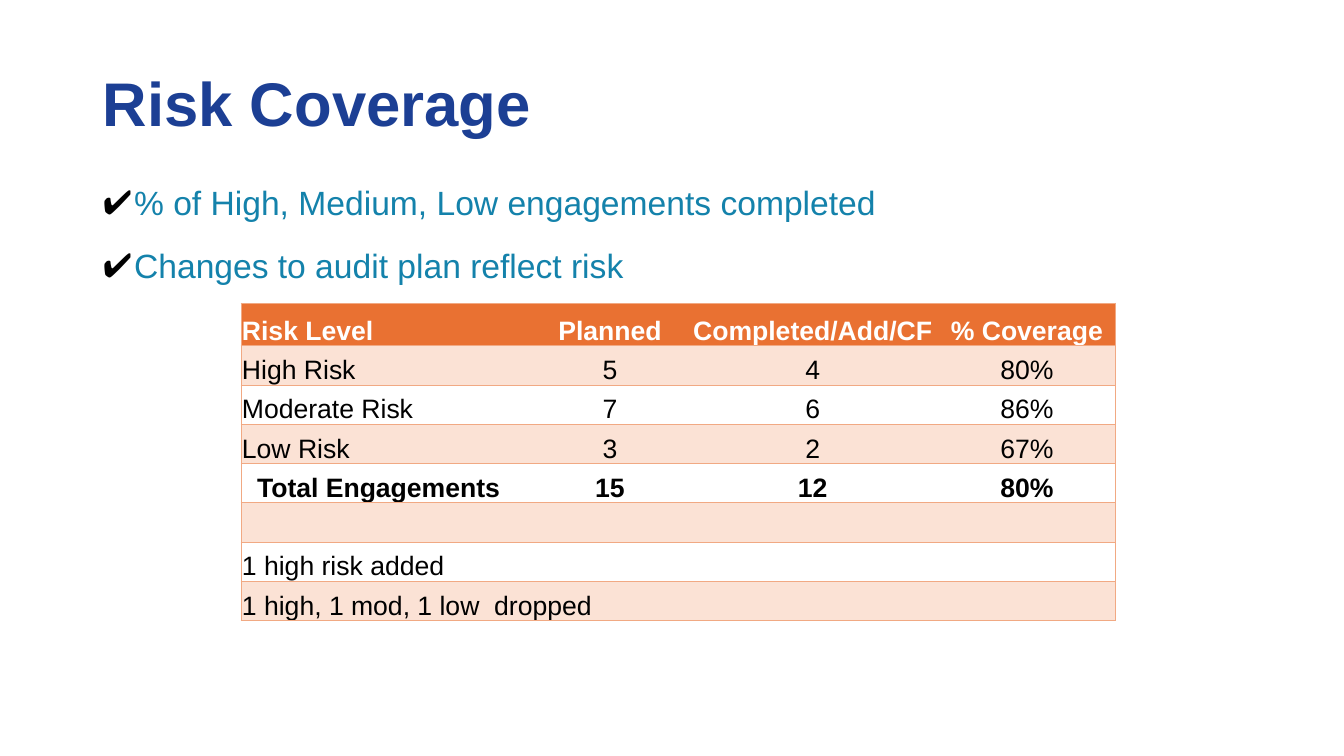
import pptx
import pptx.util
import pptx.dml.color
import pptx.enum.text
import pptx.oxml
import pptx.oxml.ns

Inches = pptx.util.Inches
Pt = pptx.util.Pt
RGBColor = pptx.dml.color.RGBColor
ALIGN = pptx.enum.text.PP_ALIGN
ANCHOR = pptx.enum.text.MSO_ANCHOR

NAVY = RGBColor(0x1C, 0x3F, 0x94)
TEAL = RGBColor(0x14, 0x82, 0xAB)
BLACK = RGBColor(0, 0, 0)
WHITE = RGBColor(255, 255, 255)
ORANGE = RGBColor(0xE9, 0x71, 0x32)
PEACH = RGBColor(0xFB, 0xE2, 0xD5)
EDGE = RGBColor(0xF1, 0xA9, 0x83)
FONT = "Arial"

POINTS = [
    "% of High, Medium, Low engagements completed",
    "Changes to audit plan reflect risk",
]
WIDTHS = [2.9, 1.52, 2.5, 1.75]
HEAD_H, ROW_H = 0.42, 0.39
TOTAL = 4
ROWS = [
    ["Risk Level", "Planned", "Completed/Add/CF", "% Coverage"],
    ["High Risk", "5", "4", "80%"],
    ["Moderate Risk", "7", "6", "86%"],
    ["Low Risk", "3", "2", "67%"],
    ["Total Engagements", "15", "12", "80%"],
    ["", "", "", ""],
    ["1 high risk added", "", "", ""],
    ["1 high, 1 mod, 1 low  dropped", "", "", ""],
]


def style(para, size, color, bold=False):
    for run in para.runs:
        run.font.name = FONT
        run.font.size = Pt(size)
        run.font.bold = bold
        run.font.color.rgb = color


def place(shape, box, anchor):
    shape.left, shape.top, shape.width, shape.height = map(Inches, box)
    frame = shape.text_frame
    frame.word_wrap = True
    frame.auto_size = pptx.enum.text.MSO_AUTO_SIZE.NONE
    frame.margin_left = frame.margin_right = Inches(0.1)
    frame.margin_top = frame.margin_bottom = 0
    frame.vertical_anchor = anchor
    return frame


def add_title(slide, box):
    frame = place(slide.shapes.title, box, ANCHOR.MIDDLE)
    frame.text = "Risk Coverage"
    para = frame.paragraphs[0]
    para.alignment = ALIGN.LEFT
    style(para, 44, NAVY, True)


def add_check(para):
    props = para._p.get_or_add_pPr()
    props.set("marL", str(Inches(0.31)))
    props.set("indent", str(-Inches(0.31)))
    space = pptx.oxml.ns.nsdecls("a")
    for xml in (
        f'<a:buClr {space}><a:srgbClr val="{BLACK}"/></a:buClr>',
        f'<a:buFont {space} typeface="{FONT}"/>',
        f'<a:buChar {space} char="✔"/>',
    ):
        props.append(pptx.oxml.parse_xml(xml))


def add_points(slide, box):
    frame = place(slide.placeholders[1], box, ANCHOR.TOP)
    for i, text in enumerate(POINTS):
        para = frame.add_paragraph() if i else frame.paragraphs[0]
        para.text = text
        add_check(para)
        para.line_spacing = 0.9
        para.space_before = Pt(19 if i else 0)
        style(para, 24, TEAL)


def set_edges(cell, sides):
    """Draw the named cell sides and clear the others."""
    props = cell._tc.get_or_add_tcPr()
    for i, side in enumerate("LRTB"):
        paint = (f'<a:solidFill><a:srgbClr val="{EDGE}"/></a:solidFill>'
                 if side in sides else "<a:noFill/>")
        props.insert(i, pptx.oxml.parse_xml(
            f'<a:ln{side} {pptx.oxml.ns.nsdecls("a")} w="{Pt(0.75)}">'
            f"{paint}</a:ln{side}>"))


def fill_cell(cell, text, row, col):
    head = row == 0
    cell.margin_left = Inches(0.16 if row == TOTAL and col == 0 else 0.01)
    cell.margin_right = cell.margin_top = Inches(0.01)
    cell.margin_bottom = 0
    cell.vertical_anchor = ANCHOR.BOTTOM
    cell.fill.solid()
    cell.fill.fore_color.rgb = ORANGE if head else PEACH if row % 2 else WHITE
    cell.text_frame.text = text
    para = cell.text_frame.paragraphs[0]
    para.alignment = ALIGN.CENTER if col else ALIGN.LEFT
    style(para, 19, WHITE if head else BLACK, head or row == TOTAL)
    set_edges(cell, "TB" + {0: "L", len(WIDTHS) - 1: "R"}.get(col, ""))


def add_grid(slide, box):
    table = slide.shapes.add_table(
        len(ROWS), len(WIDTHS), *map(Inches, box)).table
    for col, width in zip(table.columns, WIDTHS):
        col.width = Inches(width)
    for i, row in enumerate(table.rows):
        row.height = Inches(ROW_H if i else HEAD_H)
    for i, texts in enumerate(ROWS):
        for j, text in enumerate(texts):
            fill_cell(table.cell(i, j), text, i, j)
    # The last note runs across two columns
    last = len(ROWS) - 1
    table.cell(last, 0).merge(table.cell(last, 1))


def main():
    deck = pptx.Presentation()
    deck.slide_width = Inches(13.33)
    deck.slide_height = Inches(7.5)
    slide = deck.slides.add_slide(deck.slide_layouts[1])
    # Title and checked points
    add_title(slide, (0.92, 0.4, 11.5, 1.22))
    add_points(slide, (0.92, 1.85, 11.5, 3.61))
    # Coverage table
    height = HEAD_H + ROW_H * (len(ROWS) - 1)
    add_grid(slide, (2.39, 3.01, sum(WIDTHS), height))
    deck.save("out.pptx")


if __name__ == "__main__":
    main()
